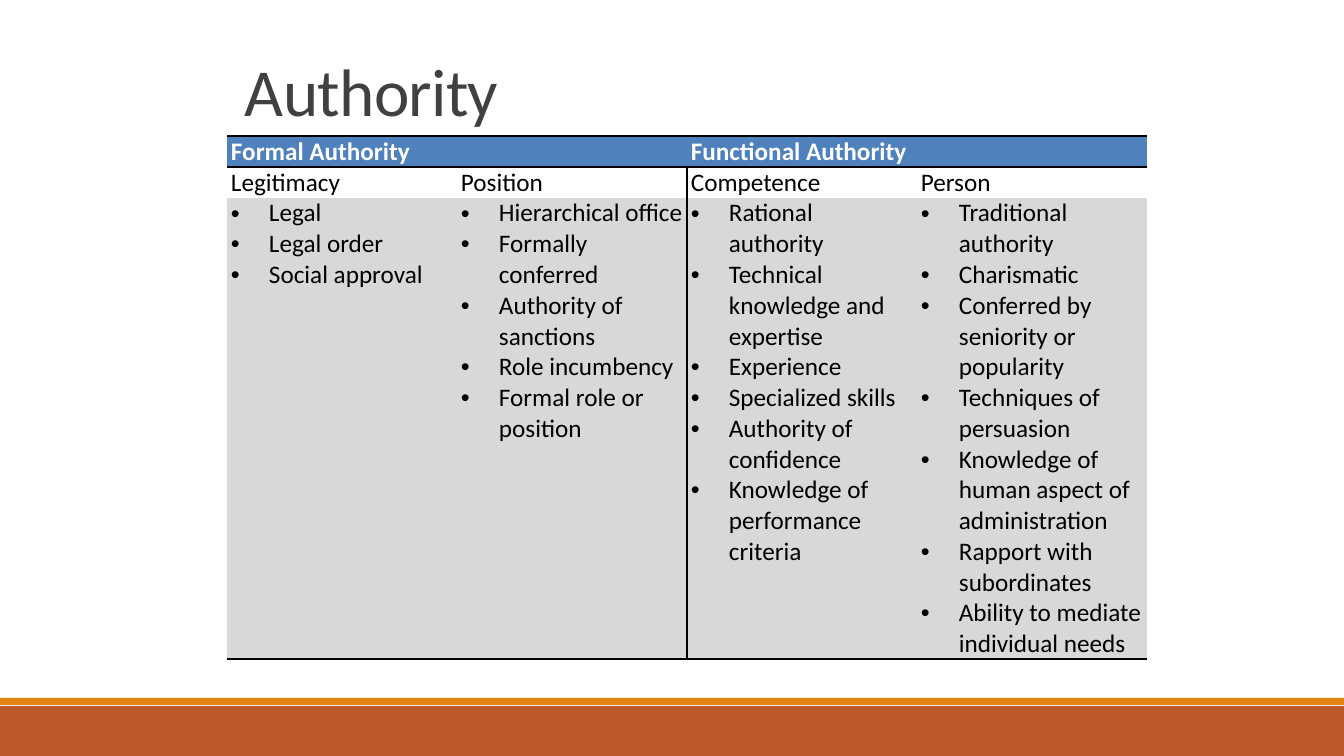
from dataclasses import dataclass

from lxml.etree import SubElement
from pptx import Presentation
from pptx.dml.color import RGBColor
from pptx.enum.shapes import MSO_SHAPE
from pptx.enum.text import MSO_ANCHOR
from pptx.oxml import parse_xml
from pptx.oxml.ns import nsdecls, qn
from pptx.util import Pt

EMU_PER_PX = 914400 / 100.8
SLIDE_WIDTH, SLIDE_HEIGHT = 1344, 756
COLUMN_WIDTH = 230
ROW_HEIGHTS = (31, 31, 461)
BULLET_INDENT = 38


@dataclass(frozen=True)
class Theme:
    """Colours, font and type sizes of the slide."""
    font: str = "Calibri"
    title_size: int = 48
    table_size: int = 18
    title: str = "404040"
    ink: str = "000000"
    paper: str = "FFFFFF"
    header: str = "4F81BD"
    details: str = "D8D8D8"
    footer: str = "BD582C"
    footer_edge: str = "E48312"
    rule: float = 1
    heavy_rule: float = 2.25


THEME = Theme()

AUTHORITIES = {
    "Formal Authority": {
        "Legitimacy": ["Legal", "Legal order", "Social approval"],
        "Position": [
            "Hierarchical office",
            "Formally conferred",
            "Authority of sanctions",
            "Role incumbency",
            "Formal role or position",
        ],
    },
    "Functional Authority": {
        "Competence": [
            "Rational authority",
            "Technical knowledge and expertise",
            "Experience",
            "Specialized skills",
            "Authority of confidence",
            "Knowledge of performance criteria",
        ],
        "Person": [
            "Traditional authority",
            "Charismatic",
            "Conferred by seniority or popularity",
            "Techniques of persuasion",
            "Knowledge of human aspect of administration",
            "Rapport with subordinates",
            "Ability to mediate individual needs",
        ],
    },
}


def px(length):
    """Turn pixels into EMU."""
    return round(length * EMU_PER_PX)


def add_run(paragraph, words, size, colour, bold=False):
    """Add one styled run to a paragraph."""
    run = paragraph.add_run()
    run.text = words
    run.font.name = THEME.font
    run.font.size = Pt(size)
    run.font.bold = bold
    run.font.color.rgb = RGBColor.from_string(colour)
    return run


def add_band(slide, top, height, colour):
    """Draw a band across the full slide width."""
    band = slide.shapes.add_shape(
        MSO_SHAPE.RECTANGLE, 0, px(top), px(SLIDE_WIDTH), px(height))
    band.shadow.inherit = False
    band.fill.solid()
    band.fill.fore_color.rgb = RGBColor.from_string(colour)
    band.line.fill.background()


def add_title(slide, words):
    """Place the title above the table."""
    frame = slide.shapes.add_textbox(px(235), px(31), px(1109), px(104)).text_frame
    frame.word_wrap = True
    frame.vertical_anchor = MSO_ANCHOR.BOTTOM
    heading = frame.paragraphs[0]
    heading.line_spacing = 0.85
    run = add_run(heading, words, THEME.title_size, THEME.title)
    run.font._element.set("spc", "-50")


def set_borders(cell, **widths):
    """Rule the named sides of a cell and clear the others."""
    properties = cell._tc.get_or_add_tcPr()
    for position, side in enumerate("LRTB"):
        width = widths.get(side, 0)
        border = parse_xml(f'<a:ln{side} {nsdecls("a")} w="{Pt(width)}"/>')
        if width:
            paint = SubElement(border, qn("a:solidFill"))
            SubElement(paint, qn("a:srgbClr"), val=THEME.ink)
        else:
            SubElement(border, qn("a:noFill"))
        properties.insert(position, border)


def style_cell(cell, fill, **widths):
    """Set the fill, insets and borders of a cell."""
    cell.margin_left = cell.margin_right = px(4)
    cell.margin_top = cell.margin_bottom = 0
    cell.fill.solid()
    cell.fill.fore_color.rgb = RGBColor.from_string(fill)
    set_borders(cell, **widths)


def add_bullets(cell, points):
    """Fill a cell with a bulleted list."""
    frame = cell.text_frame
    for number, point in enumerate(points):
        paragraph = frame.add_paragraph() if number else frame.paragraphs[0]
        properties = paragraph._p.get_or_add_pPr()
        properties.set("marL", str(px(BULLET_INDENT)))
        properties.set("indent", str(-px(BULLET_INDENT)))
        SubElement(properties, qn("a:buFont"), typeface="Arial")
        SubElement(properties, qn("a:buChar"), char="•")
        add_run(paragraph, point, THEME.table_size, THEME.ink)


def add_authority_table(slide):
    """Build the table of authority types, sources and details."""
    sources = [source for group in AUTHORITIES.values() for source in group.items()]
    table = slide.shapes.add_table(
        len(ROW_HEIGHTS), len(sources), px(227), px(136),
        px(COLUMN_WIDTH * len(sources)), px(sum(ROW_HEIGHTS))).table
    table.first_row = table.horz_banding = False
    for row, height in zip(table.rows, ROW_HEIGHTS):
        row.height = px(height)

    middle = len(sources) // 2
    for column, (source, points) in enumerate(sources):
        table.columns[column].width = px(COLUMN_WIDTH)
        divider = {middle - 1: {"R": THEME.rule}, middle: {"L": THEME.rule}}.get(column, {})
        header, label, details = (table.cell(row, column) for row in range(3))
        style_cell(header, THEME.header, T=THEME.heavy_rule, B=THEME.rule)
        style_cell(label, THEME.paper, T=THEME.rule, **divider)
        style_cell(details, THEME.details, B=THEME.heavy_rule, **divider)
        add_run(label.text_frame.paragraphs[0], source, THEME.table_size, THEME.ink)
        add_bullets(details, points)

    first = 0
    for authority, group in AUTHORITIES.items():
        header = table.cell(0, first)
        header.merge(table.cell(0, first + len(group) - 1))
        add_run(header.text_frame.paragraphs[0], authority,
                THEME.table_size, THEME.paper, bold=True)
        first += len(group)


def main():
    """Build and save the slide."""
    deck = Presentation()
    deck.slide_width, deck.slide_height = px(SLIDE_WIDTH), px(SLIDE_HEIGHT)
    slide = deck.slides.add_slide(deck.slide_layouts[6])
    add_band(slide, 706, 50, THEME.footer)
    add_band(slide, 698, 7, THEME.footer_edge)
    add_title(slide, "Authority")
    add_authority_table(slide)
    deck.save("out.pptx")


if __name__ == "__main__":
    main()
